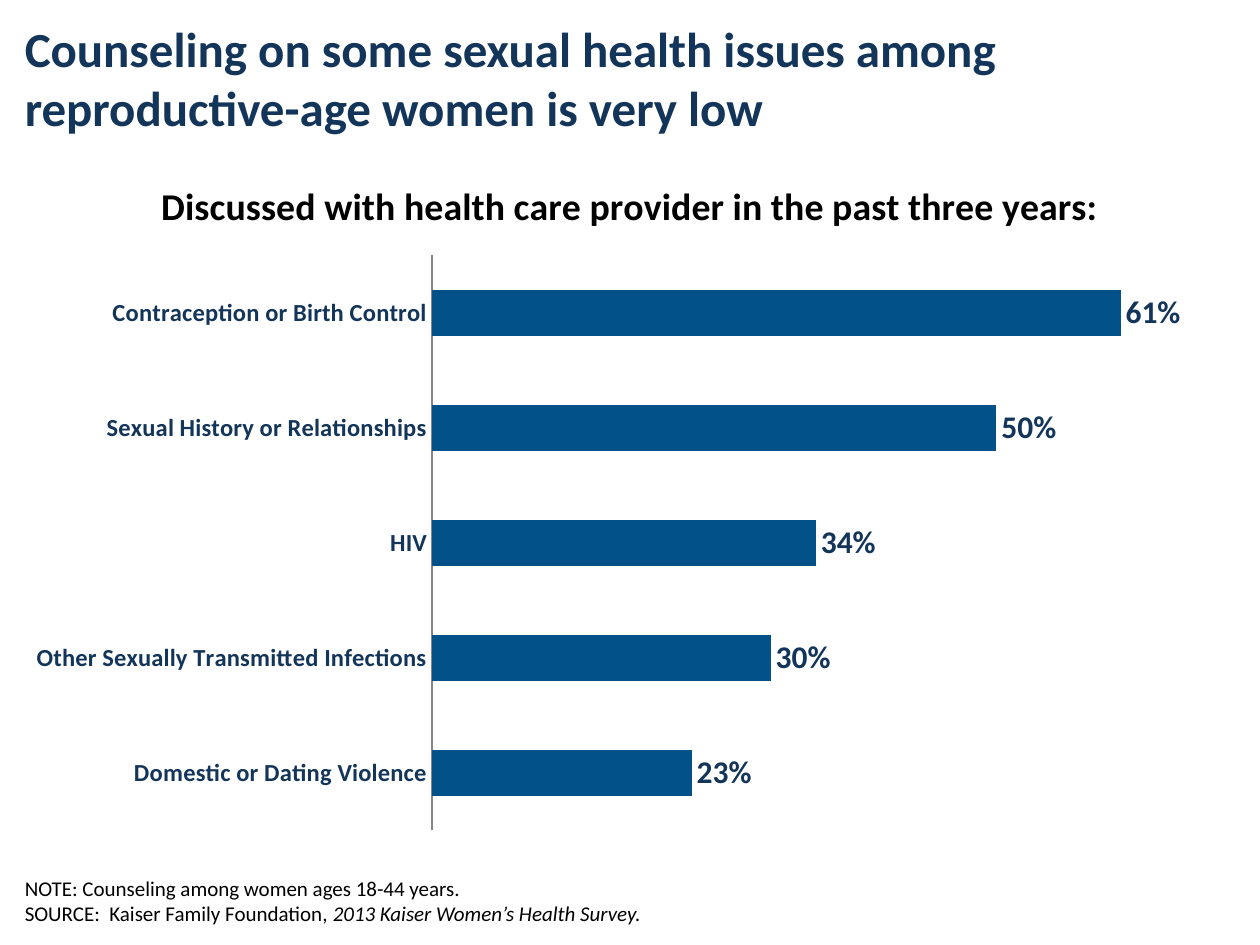
from lxml import etree
from pptx import Presentation
from pptx.chart.data import CategoryChartData
from pptx.dml.color import RGBColor
from pptx.enum.chart import XL_CHART_TYPE, XL_LABEL_POSITION, XL_TICK_MARK
from pptx.enum.text import MSO_ANCHOR
from pptx.oxml.ns import qn
from pptx.util import Cm, Pt

BAR = XL_CHART_TYPE.BAR_CLUSTERED
OUTSIDE_END = XL_LABEL_POSITION.OUTSIDE_END
NO_TICK = XL_TICK_MARK.NONE
TOP, BOTTOM = MSO_ANCHOR.TOP, MSO_ANCHOR.BOTTOM

NAVY = RGBColor(0x13, 0x35, 0x59)
BLUE = RGBColor(0x02, 0x51, 0x89)
LIGHT_BLUE = RGBColor(0x7B, 0xC7, 0xED)
MID_BLUE = RGBColor(0x00, 0x72, 0xC0)
GRAY = RGBColor(0x86, 0x86, 0x86)
BLACK = RGBColor(0, 0, 0)

MARGIN, WIDTH = Cm(0.25), Cm(24.89)


class Deck:
    font_name = "Calibri"
    series_colors = (BLUE, LIGHT_BLUE, MID_BLUE)

    def __init__(self, prs):
        self.s = prs.slides.add_slide(prs.slide_layouts[6])

    def style(self, font, size, color, bold=False):
        font.name, font.size, font.bold = self.font_name, Pt(size), bold
        font.color.rgb = color

    def text(self, top, width, height, paragraphs, size, color, bold=False, anchor=TOP):
        """Each paragraph is a list of (text, italic) runs."""
        tf = self.s.shapes.add_textbox(MARGIN, top, width, height).text_frame
        tf.word_wrap = True
        tf.vertical_anchor = anchor
        for i, runs in enumerate(paragraphs):
            p = tf.add_paragraph() if i else tf.paragraphs[0]
            self.style(p.font, size, color, bold)
            for text, italic in runs:
                r = p.add_run()
                r.text = text
                if italic:
                    r.font.italic = True

    def place(self, parent, index, **values):
        """Set a manual layout, in fractions of the chart area."""
        for old in parent.findall(qn("c:layout")):
            parent.remove(old)
        layout = etree.Element(qn("c:layout"))
        manual = etree.SubElement(layout, qn("c:manualLayout"))
        for tag, value in values.items():
            etree.SubElement(manual, qn("c:" + tag)).set("val", str(value))
        parent.insert(index, layout)

    def bar_chart(self, top, height, title, rows):
        """Only the first series has values; the others stay empty."""
        data = CategoryChartData(number_format="0%")
        data.categories = [name for name, _ in rows]
        columns = [[value for _, value in rows], [], []]
        for number, column in enumerate(columns, 1):
            data.add_series(f"Series {number}", column)
        chart = self.s.shapes.add_chart(BAR, MARGIN, top, WIDTH, height, data).chart
        self.style(chart.font, 18, BLACK)
        chart.has_legend = False

        # Chart title
        chart.has_title = True
        p = chart.chart_title.text_frame.paragraphs[0]
        p.add_run().text = title
        self.style(p.font, 21.6, BLACK, True)
        self.place(chart.chart_title._element, 1,
                   xMode="edge", yMode="edge", x=0.23 / 2, y=0.03)
        self.place(chart.plots[0]._element.getparent(), 0, layoutTarget="inner",
                   xMode="edge", yMode="edge", x=0.34, y=0.15, w=0.64, h=0.83)

        # Axes
        axis = chart.category_axis
        axis.major_tick_mark = axis.minor_tick_mark = NO_TICK
        axis.format.line.color.rgb = GRAY
        axis.format.line.width = Pt(1)
        self.style(axis.tick_labels.font, 14, NAVY, True)
        values = chart.value_axis
        values.minimum_scale, values.maximum_scale = 0, 0.7
        values.has_major_gridlines = False
        values.visible = False

        # Bars and their labels
        plot = chart.plots[0]
        plot.gap_width, plot.overlap = 150, -25
        plot.vary_by_categories = False
        for series, color in zip(plot.series, self.series_colors):
            fill = series.format.fill
            fill.solid()
            fill.fore_color.rgb = color
            labels = series.data_labels
            labels.show_value = True
            labels.number_format, labels.number_format_is_linked = "0%", False
            labels.position = OUTSIDE_END
            self.style(labels.font, 18, NAVY, True)


def main():
    prs = Presentation()
    prs.slide_width, prs.slide_height = Cm(25.4), Cm(19.05)
    deck = Deck(prs)

    # Headline
    deck.text(Cm(0.25), WIDTH, Cm(2.54), [[(
        "Counseling on some sexual health issues among "
        "reproductive-age women is very low", False)]], 28, NAVY, bold=True)

    # Topics, from bottom to top
    deck.bar_chart(
        Cm(3.05), Cm(13.97),
        "Discussed with health care provider in the past three years:",
        [("Domestic or Dating Violence", 0.23),
         ("Other Sexually Transmitted Infections", 0.30),
         ("HIV", 0.34),
         ("Sexual History or Relationships", 0.50),
         ("Contraception or Birth Control", 0.61)])

    # Note and source
    deck.text(Cm(17.27), Cm(23.11), Cm(1.52), [
        [("NOTE: Counseling among women ages 18-44 years.", False)],
        [("SOURCE:  Kaiser Family Foundation, ", False),
         ("2013 Kaiser Women’s Health Survey.", True)],
    ], 12, BLACK, anchor=BOTTOM)

    prs.save("out.pptx")


if __name__ == "__main__":
    main()
